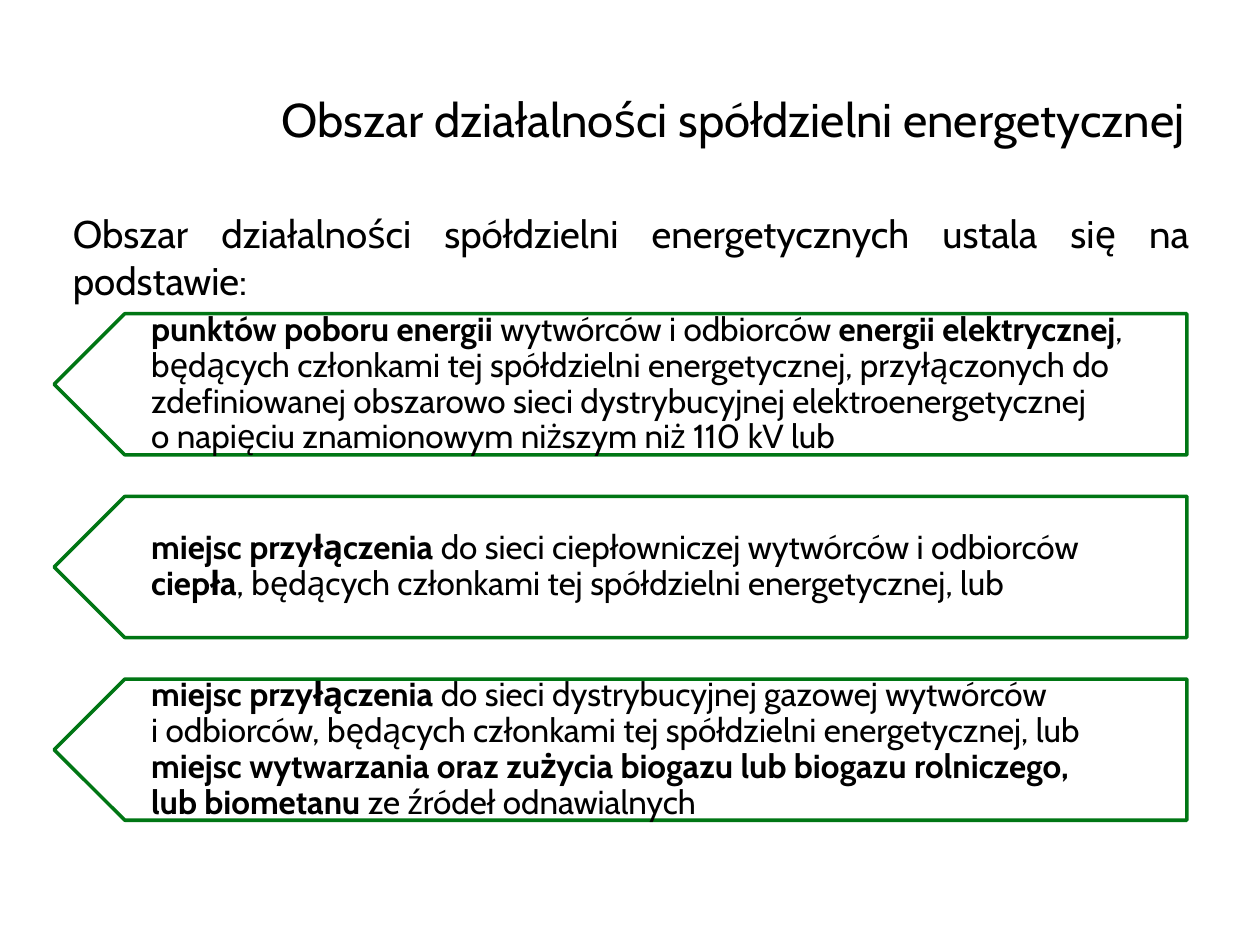
from dataclasses import dataclass

from pptx import Presentation
from pptx.dml.color import RGBColor
from pptx.enum.shapes import MSO_SHAPE as Shape
from pptx.enum.text import MSO_ANCHOR as Anchor, MSO_AUTO_SIZE as AutoSize, PP_ALIGN as Align
from pptx.slide import Slide
from pptx.text.text import _Paragraph as Paragraph
from pptx.util import Inches, Pt

FONT = "Cabin"
BLACK = RGBColor(0x00, 0x00, 0x00)
GREEN = RGBColor(0x00, 0x76, 0x14)

BANNER_TOP = 2.49
BANNER_STEP = 1.45
BANNER_HEIGHT = 1.12


@dataclass
class Span:
    text: str
    bold: bool = False


@dataclass
class Banner:
    spans: list[Span]


BANNERS = [
    Banner([
        Span("punktów poboru energii ", True),
        Span("wytwórców i odbiorców "),
        Span("energii elektrycznej", True),
        Span(", będących członkami tej spółdzielni energetycznej, przyłączonych do "
             "zdefiniowanej obszarowo sieci dystrybucyjnej elektroenergetycznej \n"
             "o napięciu znamionowym niższym niż 110 kV lub"),
    ]),
    Banner([
        Span("miejsc przyłączenia ", True),
        Span("do sieci ciepłowniczej wytwórców i odbiorców "),
        Span("ciepła", True),
        Span(", będących członkami tej spółdzielni energetycznej, lub"),
    ]),
    Banner([
        Span("miejsc przyłączenia ", True),
        Span("do sieci dystrybucyjnej gazowej wytwórców \n"
             "i odbiorców, będących członkami tej spółdzielni energetycznej, lub "),
        Span("miejsc wytwarzania oraz zużycia biogazu lub biogazu rolniczego, \n"
             "lub biometanu ", True),
        Span("ze źródeł odnawialnych"),
    ]),
]


def set_font(para: Paragraph, size: float) -> None:
    para.font.name = FONT
    para.font.size = Pt(size)
    para.font.color.rgb = BLACK


def add_span(para: Paragraph, span: Span) -> None:
    for index, line in enumerate(span.text.split("\n")):
        if index:
            para.add_line_break()
        run = para.add_run()
        run.text = line
        run.font.bold = span.bold


def add_title(page: Slide, text: str) -> None:
    title = page.shapes.title
    title.left, title.top = Inches(2.01), Inches(0.36)
    title.width, title.height = Inches(7.49), Inches(0.94)
    frame = title.text_frame
    frame.text = text
    frame.vertical_anchor = Anchor.MIDDLE
    frame.auto_size = AutoSize.NONE
    para = frame.paragraphs[0]
    para.alignment = Align.RIGHT
    para.line_spacing = 1.5
    set_font(para, 27)


def add_intro(page: Slide, text: str) -> None:
    box = page.shapes.add_textbox(Inches(0.48), Inches(1.62), Inches(9.06), Inches(0.55))
    frame = box.text_frame
    frame.word_wrap = True
    frame.text = text
    para = frame.paragraphs[0]
    para.alignment = Align.JUSTIFY
    para.space_after = Pt(6)
    set_font(para, 22)


def add_banner(page: Slide, banner: Banner, top: float) -> None:
    arrow = page.shapes.add_shape(
        Shape.PENTAGON, Inches(0.43), Inches(top), Inches(8.99), Inches(BANNER_HEIGHT))
    arrow.rotation = 180
    arrow.shadow.inherit = False
    arrow.fill.background()
    arrow.line.color.rgb = GREEN
    arrow.line.width = Pt(2)

    box = page.shapes.add_textbox(
        Inches(0.71), Inches(top), Inches(8.71), Inches(BANNER_HEIGHT))
    frame = box.text_frame
    frame.word_wrap = True
    frame.vertical_anchor = Anchor.MIDDLE
    frame.margin_left, frame.margin_right = Inches(0.49), Inches(0.15)
    frame.margin_top = frame.margin_bottom = Inches(0.08)
    para = frame.paragraphs[0]
    para.line_spacing = 0.9
    set_font(para, 19)
    for span in banner.spans:
        add_span(para, span)


def main() -> None:
    deck = Presentation()
    deck.slide_width, deck.slide_height = Inches(10), Inches(7.5)
    page = deck.slides.add_slide(deck.slide_layouts[5])
    for index, banner in enumerate(BANNERS):
        add_banner(page, banner, BANNER_TOP + index * BANNER_STEP)
    add_title(page, "Obszar działalności spółdzielni energetycznej")
    add_intro(page, "Obszar działalności spółdzielni energetycznych ustala się na podstawie:")
    deck.save("out.pptx")


if __name__ == "__main__":
    main()
